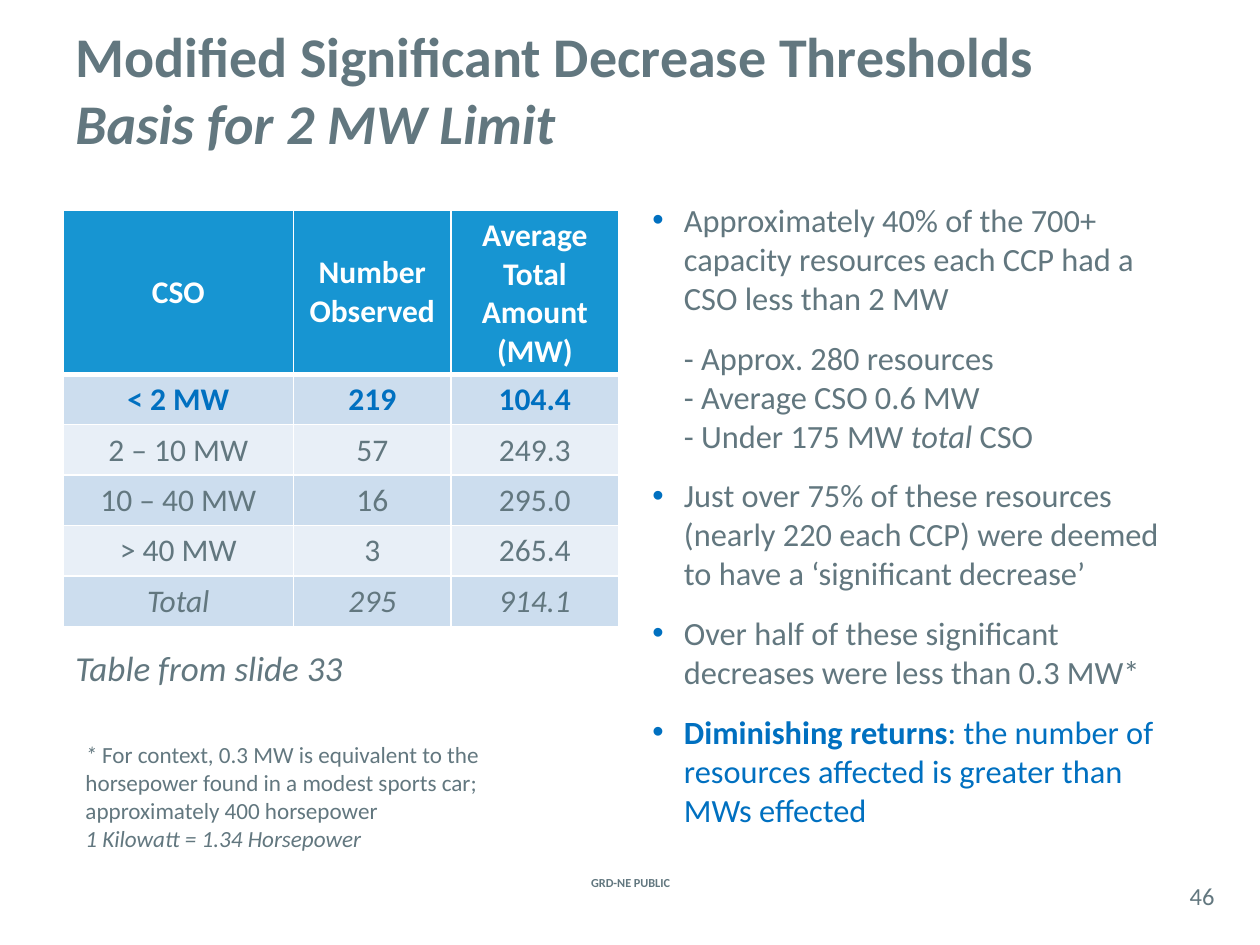
from lxml.etree import SubElement
from pptx import Presentation
from pptx.dml.color import RGBColor
from pptx.enum.text import MSO_ANCHOR as Anchor, PP_ALIGN as Align
from pptx.oxml.ns import qn
from pptx.util import Inches, Pt

FONT = "Calibri"
SLATE, BLUE, WHITE = "62777F", "0070C0", "FFFFFF"
HEADER_FILL, BAND_FILLS = "1795D2", ("CCDDEE", "E8EFF7")
BOLD, ITALIC = {"bold": True}, {"italic": True}

TITLE = [("Modified Significant Decrease Thresholds\n", {}), ("Basis for 2 MW Limit", ITALIC)]
HEADER = ("CSO", "Number Observed", "Average Total Amount\n(MW)")
ROWS = [
    (("< 2 MW", "219", "104.4"), {"bold": True, "color": BLUE}),
    (("2 – 10 MW", "57", "249.3"), {}),
    (("10 – 40 MW", "16", "295.0"), {}),
    (("> 40 MW", "3", "265.4"), {}),
    (("Total", "295", "914.1"), ITALIC),
]
COLUMN_WIDTHS = (1.83, 1.25, 1.33)
HEADER_HEIGHT, ROW_HEIGHT = 1.3, 0.4
POINTS = [
    ("•", [("Approximately 40% of the 700+ capacity resources each CCP had a CSO less than 2 MW", {})]),
    ("", [("- Approx. 280 resources\n- Average CSO 0.6 MW\n- Under 175 MW ", {}),
          ("total ", ITALIC), ("CSO", {})]),
    ("•", [("Just over 75% of these resources (nearly 220 each CCP) were deemed "
            "to have a ‘significant decrease’", {})]),
    ("•", [("Over half of these significant decreases were less than 0.3 MW*", {})]),
    ("•", [("Diminishing returns", {"bold": True, "color": BLUE}),
           (": the number of resources affected is greater than MWs effected", {"color": BLUE})]),
]
CAPTION = [("Table from slide 33", ITALIC)]
FOOTNOTE = [
    ("* ", ITALIC),
    ("For context, 0.3 MW is equivalent to the horsepower found in a modest sports car; "
     "approximately 400 horsepower\n", {}),
    ("1 Kilowatt = 1.34 Horsepower", ITALIC),
]


def rgb(color):
    return RGBColor.from_string(color)


def write(para, spans, size, color=SLATE, bold=False, italic=False, align=Align.LEFT):
    para.alignment = align
    for text, style in spans:
        look = {"color": color, "bold": bold, "italic": italic, **style}
        for index, line in enumerate(text.split("\n")):
            if index:
                para.add_line_break()
            if line:
                span = para.add_run()
                span.text = line
                span.font.name, span.font.size = FONT, Pt(size)
                span.font.bold, span.font.italic = look["bold"], look["italic"]
                span.font.color.rgb = rgb(look["color"])


def add_frame(page, place, anchor=Anchor.TOP, inset=None):
    frame = page.shapes.add_textbox(*map(Inches, place)).text_frame
    frame.word_wrap = True
    frame.vertical_anchor = anchor
    if inset is not None:
        frame.margin_left = frame.margin_right = Inches(inset)
        frame.margin_top = frame.margin_bottom = Inches(inset)
    return frame


def add_text(page, place, spans, size, anchor=Anchor.TOP, inset=None, **style):
    write(add_frame(page, place, anchor, inset).paragraphs[0], spans, size, **style)


def set_bullet(para, mark):
    props = para._p.get_or_add_pPr()
    props.set("marL", str(Inches(0.25)))
    props.set("indent", str(Inches(-0.25 if mark else 0)))
    if mark:
        shade = SubElement(SubElement(props, qn("a:buClr")), qn("a:srgbClr"))
        shade.set("val", BLUE)
        SubElement(props, qn("a:buFont")).set("typeface", "Arial")
        SubElement(props, qn("a:buChar")).set("char", mark)
    else:
        SubElement(props, qn("a:buNone"))


def set_borders(cell, top, bottom):
    props = cell._tc.get_or_add_tcPr()
    for side, width in (("L", 1), ("R", 1), ("T", top), ("B", bottom)):
        line = SubElement(props, qn(f"a:ln{side}"), w=str(Pt(width)))
        SubElement(SubElement(line, qn("a:solidFill")), qn("a:srgbClr")).set("val", WHITE)


def fill_cell(cell, text, fill, anchor=Anchor.TOP, top=1, bottom=1, **style):
    set_borders(cell, top, bottom)
    cell.fill.solid()
    cell.fill.fore_color.rgb = rgb(fill)
    cell.margin_left = cell.margin_right = Inches(0.04)
    cell.margin_top = cell.margin_bottom = Inches(0.05)
    cell.vertical_anchor = anchor
    write(cell.text_frame.paragraphs[0], [(text, {})], 18, align=Align.CENTER, **style)


def add_results(page):
    height = HEADER_HEIGHT + ROW_HEIGHT * len(ROWS)
    table = page.shapes.add_table(
        len(ROWS) + 1, len(HEADER), Inches(0.5), Inches(1.67),
        Inches(sum(COLUMN_WIDTHS)), Inches(height)).table
    for column, width in zip(table.columns, COLUMN_WIDTHS):
        column.width = Inches(width)
    for index, row in enumerate(table.rows):
        row.height = Inches(ROW_HEIGHT if index else HEADER_HEIGHT)
    for column, text in enumerate(HEADER):
        fill_cell(table.cell(0, column), text, HEADER_FILL, Anchor.MIDDLE,
                  bottom=3, color=WHITE, bold=True)
    for index, (values, style) in enumerate(ROWS):
        for column, text in enumerate(values):
            fill_cell(table.cell(index + 1, column), text, BAND_FILLS[index % 2],
                      top=1 if index else 3, **style)


def add_points(page):
    frame = add_frame(page, (5.08, 1.54, 4.42, 5.21))
    for index, (mark, spans) in enumerate(POINTS):
        para = frame.add_paragraph() if index else frame.paragraphs[0]
        set_bullet(para, mark)
        if index:
            para.space_before = Pt(12)
        write(para, spans, 18.5)


def main():
    deck = Presentation()
    deck.slide_width, deck.slide_height = Inches(10), Inches(7.5)
    page = deck.slides.add_slide(deck.slide_layouts[6])
    add_text(page, (0.5, 0.08, 9, 1.25), TITLE, 32, Anchor.MIDDLE, bold=True)
    add_results(page)
    add_points(page)
    add_text(page, (0.5, 5.08, 4.17, 0.96), CAPTION, 20)
    add_text(page, (0.58, 5.83, 4.08, 0.83), FOOTNOTE, 13.2)
    add_text(page, (4.27, 6.92, 1.47, 0.17), [("GRD-NE PUBLIC", BOLD)], 7,
             Anchor.MIDDLE, align=Align.CENTER)
    add_text(page, (9.33, 6.96, 0.42, 0.29), [("46", {})], 14,
             Anchor.MIDDLE, 0, align=Align.CENTER)
    deck.save("out.pptx")


if __name__ == "__main__":
    main()
